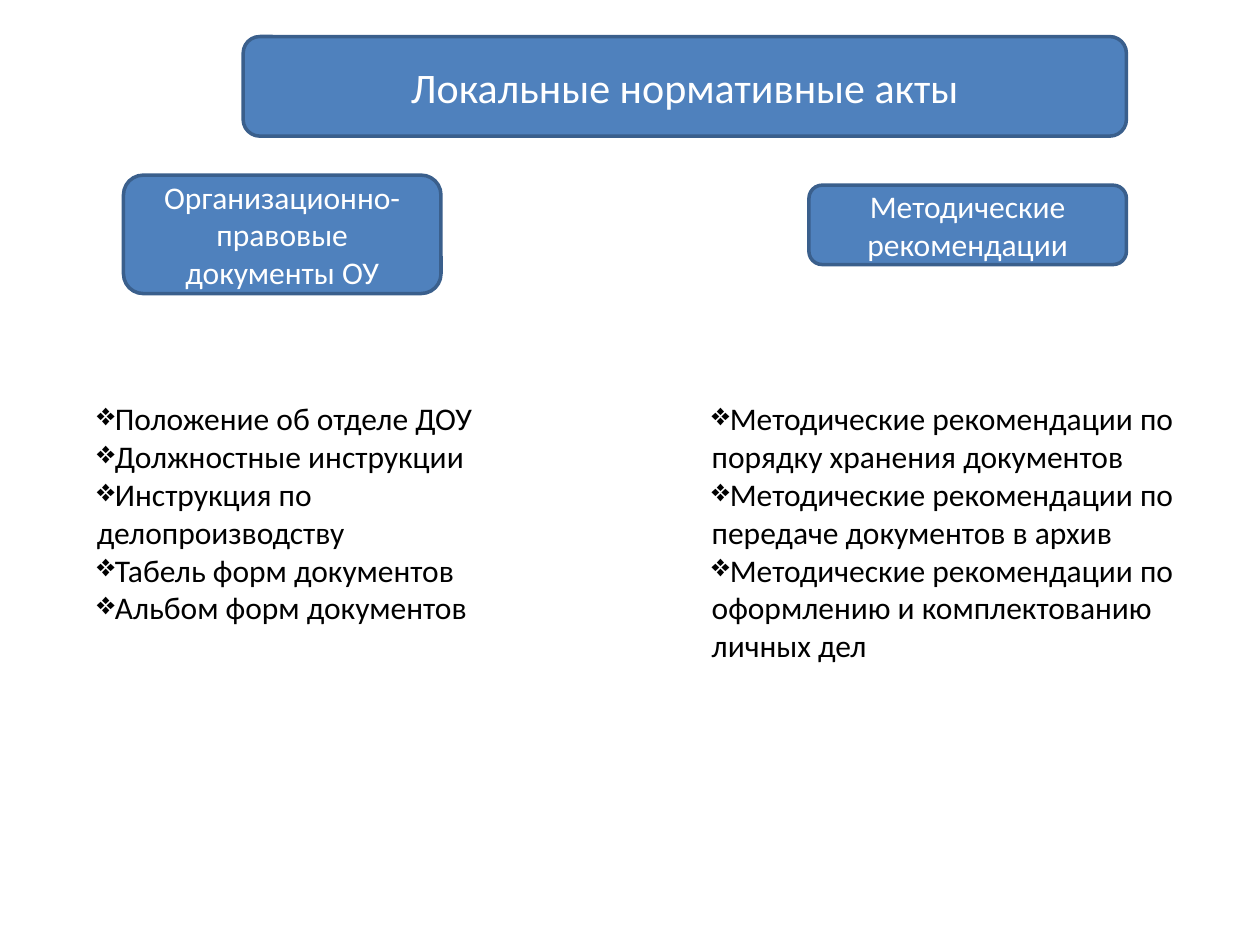
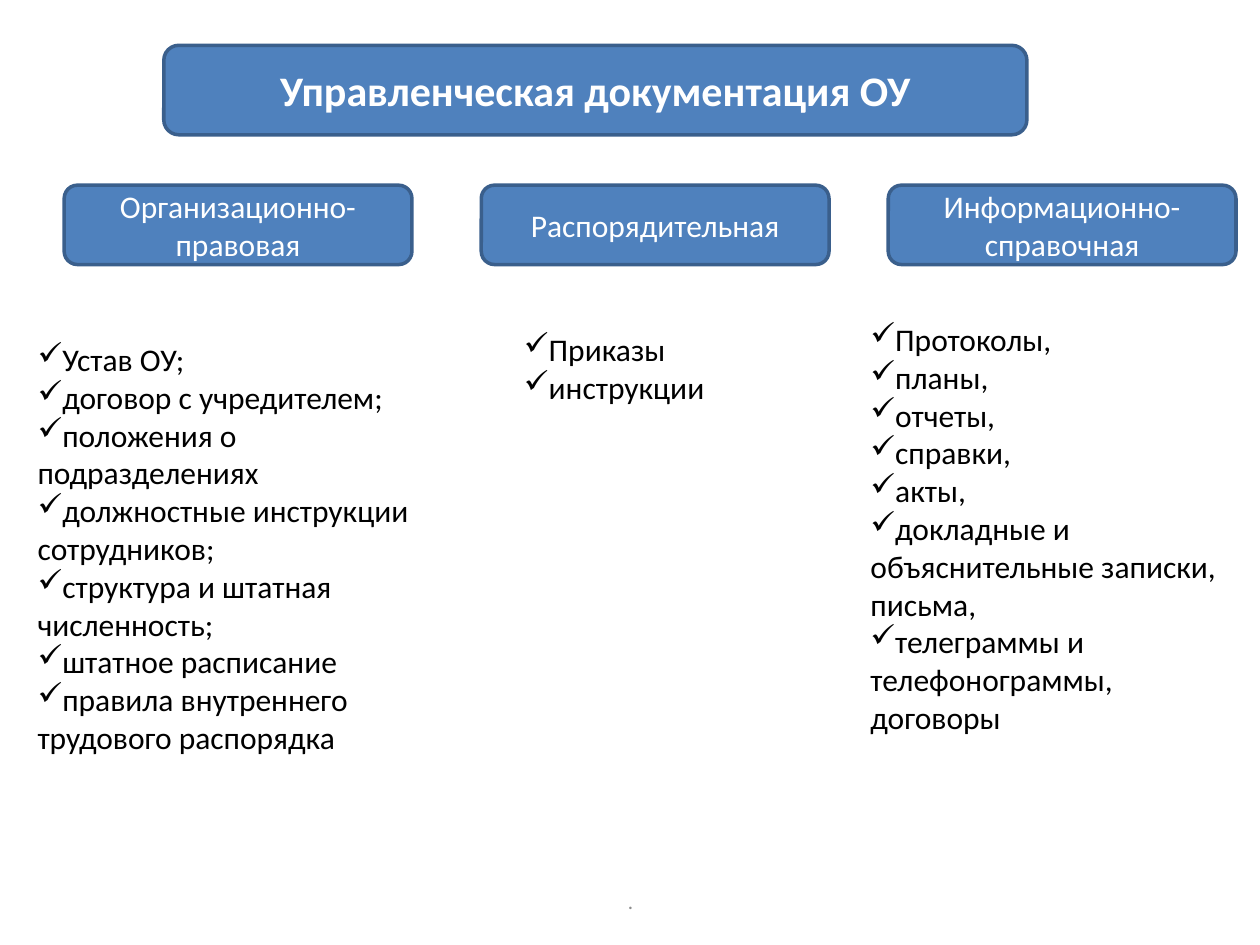
import pptx
import pptx.dml.color
import pptx.enum.shapes
import pptx.enum.text
import pptx.oxml.ns
import pptx.util
from lxml import etree

PX = 9144  # EMU per px, 100 px to the inch
COLORS = {
    "box": "4F81BD",
    "edge": "3A5F8C",
    "light": "FFFFFF",
    "body": "000000",
    "footer": "8C8C8C",
}
CENTER = pptx.enum.text.PP_ALIGN.CENTER
MIDDLE = pptx.enum.text.MSO_ANCHOR.MIDDLE


def rgb(name):
    return pptx.dml.color.RGBColor.from_string(COLORS[name])


class Deck:
    """Holds the shared style and the current slide."""

    font = "Calibri"

    def __init__(self, width, height):
        self.prs = pptx.Presentation()
        self.prs.slide_width, self.prs.slide_height = width * PX, height * PX
        self.slide = None

    def new_slide(self):
        self.slide = self.prs.slides.add_slide(self.prs.slide_layouts[6])

    def set_text(self, frame, lines, size, color, bold=False, align=None, bullet=None):
        frame.word_wrap = True
        font_format = {"name": self.font, "size": pptx.util.Pt(size), "bold": bold}
        for number, line in enumerate(lines):
            paragraph = frame.add_paragraph() if number else frame.paragraphs[0]
            paragraph.alignment = align
            run = paragraph.add_run()
            run.text = line
            for key, value in font_format.items():
                setattr(run.font, key, value)
            run.font.color.rgb = rgb(color)
            if bullet:
                mark = etree.SubElement(paragraph._p.get_or_add_pPr(),
                                        pptx.oxml.ns.qn("a:buChar"))
                mark.set("char", bullet)

    def box(self, place, text, size=18, bold=False):
        shape = self.slide.shapes.add_shape(
            pptx.enum.shapes.MSO_SHAPE.ROUNDED_RECTANGLE, *(n * PX for n in place))
        shape.shadow.inherit = False
        shape.fill.solid()
        shape.fill.fore_color.rgb = rgb("box")
        shape.line.color.rgb = rgb("edge")
        shape.line.width = pptx.util.Pt(2)
        shape.text_frame.vertical_anchor = MIDDLE
        self.set_text(shape.text_frame, [text], size, "light", bold, CENTER)

    def title(self, place, text, bold=False):
        self.box(place, text, 24, bold)

    def text_box(self, place):
        return self.slide.shapes.add_textbox(*(n * PX for n in place)).text_frame

    def bullets(self, place, lines, bullet):
        frame = self.text_box(place)
        self.set_text(frame, lines, 18, "body", bullet=bullet)
        frame.auto_size = pptx.enum.text.MSO_AUTO_SIZE.SHAPE_TO_FIT_TEXT

    def footer(self, place, text):
        frame = self.text_box(place)
        frame.vertical_anchor = MIDDLE
        self.set_text(frame, [text], 12, "footer", align=CENTER)

    def columns(self, columns, bullet):
        for head_place, head, list_place, lines in columns:
            self.box(head_place, head)
            self.bullets(list_place, lines, bullet)


def main():
    deck = Deck(1000, 750)

    # Local regulations
    deck.new_slide()
    deck.title((193, 29, 701, 79), "Локальные нормативные акты")
    deck.columns([
        ((98, 139, 252, 94), "Организационно-правовые документы ОУ",
         (67, 312, 362, 222), [
             "Положение об отделе ДОУ",
             "Должностные инструкции",
             "Инструкция по делопроизводству",
             "Табель форм документов",
             "Альбом форм документов"]),
        ((642, 147, 252, 63), "Методические рекомендации",
         (555, 312, 402, 222), [
             "Методические рекомендации по " + topic for topic in (
                 "порядку хранения документов",
                 "передаче документов в архив",
                 "оформлению и комплектованию личных дел")]),
    ], "❖")

    # Management documents
    deck.new_slide()
    deck.footer((342, 695, 317, 40), ".")
    deck.title((130, 36, 685, 71), "Управленческая документация ОУ", bold=True)
    deck.columns([
        ((51, 147, 276, 63), "Организационно-правовая",
         (20, 265, 346, 343), [
             "Устав ОУ;",
             "договор с учредителем;",
             "положения о подразделениях",
             "должностные инструкции сотрудников;",
             "структура и штатная численность;",
             "штатное расписание",
             "правила внутреннего трудового распорядка"]),
        ((382, 147, 276, 63), "Распорядительная",
         (406, 257, 205, 71), ["Приказы", "инструкции"]),
        ((705, 147, 276, 63), "Информационно-справочная",
         (681, 249, 295, 343), [
             "Протоколы,",
             "планы,",
             "отчеты,",
             "справки,",
             "акты,",
             "докладные и объяснительные записки, письма,",
             "телеграммы и телефонограммы, договоры"]),
    ], "✓")

    deck.prs.save("out.pptx")


if __name__ == "__main__":
    main()
